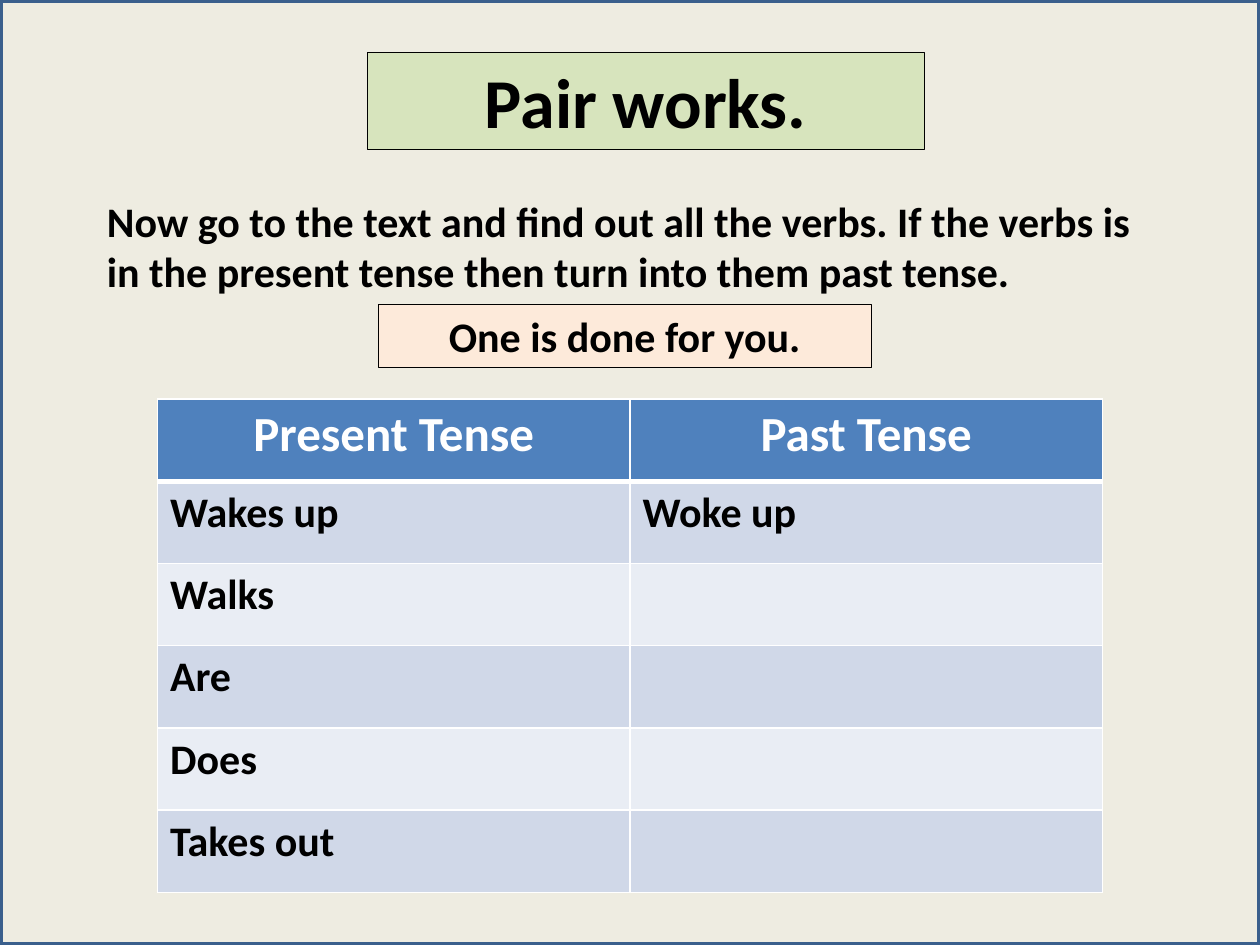
from dataclasses import dataclass

from lxml.etree import SubElement
from pptx import Presentation
from pptx.dml.color import RGBColor
from pptx.enum.shapes import MSO_SHAPE
from pptx.enum.text import MSO_ANCHOR, PP_ALIGN
from pptx.oxml.ns import qn
from pptx.util import Inches, Pt


@dataclass(frozen=True)
class Theme:
    font: str = "Calibri"
    title_size: int = 40
    header_size: int = 28
    body_size: int = 24
    ink: str = "000000"
    white: str = "FFFFFF"
    page: str = "EEECE1"
    title_fill: str = "D7E4BD"
    hint_fill: str = "FDEADA"
    header_fill: str = "4F81BD"
    bands: tuple = ("D0D8E8", "E9EDF4")
    frame: str = "3A5F8C"


THEME = Theme()
COLUMNS, ROWS = 120, 90
CELL = Inches(10) / COLUMNS

VERBS = [
    ("Present Tense", "Past Tense"),
    ("Wakes up", "Woke up"),
    ("Walks", ""),
    ("Are", ""),
    ("Does", ""),
    ("Takes out", ""),
]


def grid(*box):
    """Turn left, top, width and height in grid cells into slide lengths."""
    return [round(value * CELL) for value in box]


def paint(fill, color):
    fill.solid()
    fill.fore_color.rgb = RGBColor.from_string(color)


def write(text_frame, text, size, color=THEME.ink, align=PP_ALIGN.LEFT):
    text_frame.word_wrap = True
    para = text_frame.paragraphs[0]
    para.alignment = align
    span = para.add_run()
    span.text = text
    span.font.name = THEME.font
    span.font.size = Pt(size)
    span.font.bold = True
    span.font.color.rgb = RGBColor.from_string(color)


def add_rectangle(page, box, line_color, line_width):
    rectangle = page.shapes.add_shape(MSO_SHAPE.RECTANGLE, *grid(*box))
    rectangle.shadow.inherit = False
    rectangle.line.color.rgb = RGBColor.from_string(line_color)
    rectangle.line.width = Pt(line_width)
    return rectangle


def add_banner(page, box, text, size, fill):
    banner = add_rectangle(page, box, THEME.ink, 0.25)
    paint(banner.fill, fill)
    banner.text_frame.vertical_anchor = MSO_ANCHOR.TOP
    write(banner.text_frame, text, size, align=PP_ALIGN.CENTER)


def add_instruction(page, box, text):
    instruction = page.shapes.add_textbox(*grid(*box))
    write(instruction.text_frame, text, THEME.body_size)


def set_borders(cell, **widths):
    """Draw white cell borders; widths are points keyed by L, R, T and B."""
    properties = cell._tc.get_or_add_tcPr()
    for index, (side, width) in enumerate(widths.items()):
        line = properties.makeelement(qn(f"a:ln{side}"), {"w": str(Pt(width))})
        fill = SubElement(line, qn("a:solidFill"))
        SubElement(fill, qn("a:srgbClr"), val=THEME.white)
        properties.insert(index, line)


def add_verb_table(page, box, rows):
    table = page.shapes.add_table(len(rows), len(rows[0]), *grid(*box)).table
    for row, words in enumerate(rows):
        header = row == 0
        for column, word in enumerate(words):
            cell = table.cell(row, column)
            paint(cell.fill, THEME.header_fill if header else THEME.bands[(row - 1) % 2])
            set_borders(cell, L=1, R=1, T=3 if row == 1 else 1, B=3 if header else 1)
            if header:
                write(cell.text_frame, word, THEME.header_size, THEME.white, PP_ALIGN.CENTER)
            elif word:
                write(cell.text_frame, word, THEME.body_size)


def add_frame(page, box):
    frame = add_rectangle(page, box, THEME.frame, 3)
    frame.fill.background()


def build_pair_work(page):
    paint(page.background.fill, THEME.page)
    add_banner(page, (35, 5, 53, 9.25), "Pair works.", THEME.title_size, THEME.title_fill)
    add_instruction(
        page,
        (9, 18, 100, 10.9),
        "Now go to the text and find out all the verbs. If the verbs is "
        "in the present tense then turn into them past tense.",
    )
    add_banner(page, (36, 29, 47, 6), "One is done for you.", THEME.body_size, THEME.hint_fill)
    add_verb_table(page, (15, 38, 90, 47), VERBS)
    add_frame(page, (0, 0, COLUMNS, ROWS))


def main():
    deck = Presentation()
    deck.slide_width, deck.slide_height = grid(COLUMNS, ROWS)
    build_pair_work(deck.slides.add_slide(deck.slide_layouts[6]))
    deck.save("out.pptx")


if __name__ == "__main__":
    main()
